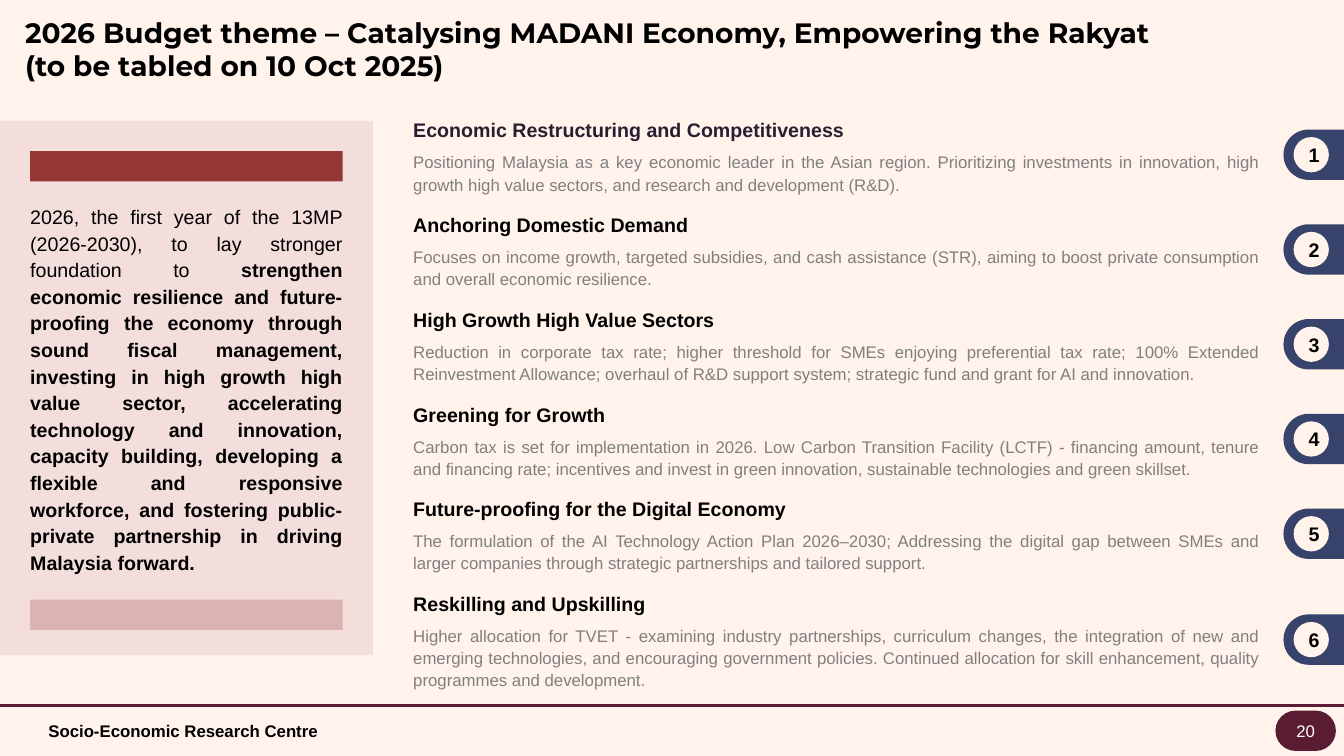
"""Build the 2026 Budget theme slide on a grid of tenth-of-an-inch cells."""
from dataclasses import dataclass

from lxml import etree
from pptx import Presentation
from pptx.dml.color import RGBColor
from pptx.enum import shapes, text
from pptx.oxml import ns
from pptx import util as u

COLUMNS, ROWS = 133.3, 75
BACKGROUND, BLACK, WHITE = "FFF3EB", "000000", "FFFFFF"
GREY, NAVY, MAROON = "808080", "37436B", "591C32"
FIRST_ROW, THEME_PITCH, TAB_WIDTH, TAB_HEIGHT, BADGE = 11, 9.4, 6, 5, 3.5
BADGE_CENTRE = 130.05


@dataclass
class Area:
    """A rectangle in grid columns and rows."""
    column: float
    row: float
    columns: float
    rows: float

    def emu(self) -> tuple:
        """Return left, top, width and height as lengths."""
        return tuple(cells(n) for n in (self.column, self.row, self.columns, self.rows))


@dataclass
class Theme:
    """A budget focus area."""
    heading: str
    detail: str
    color: str = BLACK
    rows: float = 8.7


THEMES = [
    Theme("Economic Restructuring and Competitiveness",
          "Positioning Malaysia as a key economic leader in the Asian region. Prioritizing investments in "
          "innovation, high growth high value sectors, and research and development (R&D).", "281E30"),
    Theme("Anchoring Domestic Demand",
          "Focuses on income growth, targeted subsidies, and cash assistance (STR), aiming to boost private "
          "consumption and overall economic resilience."),
    Theme("High Growth High Value Sectors",
          "Reduction in corporate tax rate; higher threshold for SMEs enjoying preferential tax rate; 100% "
          "Extended Reinvestment Allowance; overhaul of R&D support system; strategic fund and grant for AI "
          "and innovation."),
    Theme("Greening for Growth",
          "Carbon tax is set for implementation in 2026. Low Carbon Transition Facility (LCTF) - financing "
          "amount, tenure and financing rate; incentives and invest in green innovation, sustainable "
          "technologies and green skillset."),
    Theme("Future-proofing for the Digital Economy",
          "The formulation of the AI Technology Action Plan 2026–2030; Addressing the digital gap between "
          "SMEs and larger companies through strategic partnerships and tailored support."),
    Theme("Reskilling and Upskilling",
          "Higher allocation for TVET - examining industry partnerships, curriculum changes, the integration "
          "of new and emerging technologies, and encouraging government policies. Continued allocation for "
          "skill enhancement, quality programmes and development.", rows=10.9),
]
TITLE = ("2026 Budget theme – Catalysing MADANI Economy, Empowering the Rakyat",
         "(to be tabled on 10 Oct 2025)")
OUTLOOK = "2026, the first year of the 13MP (2026-2030), to lay stronger foundation to "
OUTLOOK_BOLD = (
    "strengthen economic resilience and future-proofing the economy through sound fiscal management, "
    "investing in high growth high value sector, accelerating technology and innovation, capacity building, "
    "developing a flexible and responsive workforce, and fostering public-private partnership in driving "
    "Malaysia forward.")


def cells(count: float) -> int:
    """Convert grid cells to a length."""
    return u.Inches(count / 10)


def rgb(value: str) -> RGBColor:
    """Turn a hex string into a colour."""
    return RGBColor.from_string(value)


def style(paragraph, size: float, color: str = BLACK, bold: bool | None = None, name: str = "Arial",
          align=text.PP_ALIGN.JUSTIFY, spacing: float | None = None) -> None:
    """Format a whole paragraph."""
    paragraph.alignment = align
    if spacing:
        paragraph.line_spacing = spacing
        paragraph.space_after = u.Pt(6)
    font = paragraph.font
    font.name, font.size, font.bold = name, u.Pt(size), bold
    font.color.rgb = rgb(color)


def set_frame(shape, left: float = 1, top: float = 0.5, right: float = 1, bottom: float = 0.5,
              anchor=text.MSO_ANCHOR.MIDDLE):
    """Wrap, anchor and inset a text frame, then return it."""
    frame = shape.text_frame
    frame.word_wrap = True
    frame.vertical_anchor = anchor
    frame.margin_left, frame.margin_top = cells(left), cells(top)
    frame.margin_right, frame.margin_bottom = cells(right), cells(bottom)
    return frame


def add_block(slide, kind, area: Area, color: str):
    """Add a flat filled shape without outline."""
    shape = slide.shapes.add_shape(kind, *area.emu())
    shape.shadow.inherit = False
    shape.fill.solid()
    shape.fill.fore_color.rgb = rgb(color)
    shape.line.fill.background()
    return shape


def add_label(shape, label: str, size: float, color: str, bold: bool, inset: float = 1) -> None:
    """Centre a short label in a shape."""
    frame = set_frame(shape, left=inset, right=inset)
    frame.text = label
    style(frame.paragraphs[0], size, color, bold, align=text.PP_ALIGN.CENTER)


def add_title(slide) -> None:
    """Place the two-line title."""
    title = slide.shapes.title
    title.left, title.top, title.width, title.height = Area(2, 0, 128, 5).emu()
    frame = set_frame(title, 0.5, 1.5, 0.5, 0.5, text.MSO_ANCHOR.TOP)
    frame.auto_size = text.MSO_AUTO_SIZE.NONE
    frame.text = "\n".join(TITLE)
    for paragraph in frame.paragraphs:
        style(paragraph, 20, bold=True, name="Montserrat")


def add_footer(slide) -> None:
    """Draw the rule, the centre's name and the page number."""
    rule = slide.shapes.add_connector(shapes.MSO_CONNECTOR.STRAIGHT, 0, cells(70), cells(COLUMNS), cells(70))
    rule.line.color.rgb = rgb(MAROON)
    rule.line.width = u.Pt(2.25)
    etree.SubElement(rule._element.spPr, ns.qn("a:effectLst"))
    frame = set_frame(slide.shapes.add_textbox(*Area(4, 71.1, 30, 2.8).emu()), 0.8, 0.4, 0.8, 0.4)
    frame.text = "Socio-Economic Research Centre"
    style(frame.paragraphs[0], 12, bold=True, align=text.PP_ALIGN.LEFT)
    pill = add_block(slide, shapes.MSO_SHAPE.ROUNDED_RECTANGLE, Area(126.5, 70.5, 6, 4), MAROON)
    pill.adjustments[0] = 0.5
    add_label(pill, "20", 12, WHITE, False, inset=0)


def add_outlook(slide) -> None:
    """Draw the side panel with its two bars."""
    rectangle = shapes.MSO_SHAPE.RECTANGLE
    panel = add_block(slide, rectangle, Area(0, 12, 37, 53), "F4DEDC")
    paragraph = set_frame(panel, 3, 2, 3, 2).paragraphs[0]
    style(paragraph, 14, spacing=1.13)
    paragraph.add_run().text = OUTLOOK
    emphasis = paragraph.add_run()
    emphasis.text = OUTLOOK_BOLD
    emphasis.font.bold = True
    for row, color in ((15, "953735"), (59.5, "DBB3B1")):
        add_block(slide, rectangle, Area(3, row, 31, 3), color)


def add_theme(slide, index: int, theme: Theme) -> None:
    """Draw one theme with its numbered tab at the slide's edge."""
    row = FIRST_ROW + index * THEME_PITCH
    middle = row + theme.rows / 2
    box = slide.shapes.add_textbox(*Area(40, row, 86, theme.rows).emu())
    frame = set_frame(box, anchor=text.MSO_ANCHOR.TOP)
    frame.auto_size = text.MSO_AUTO_SIZE.SHAPE_TO_FIT_TEXT
    frame.text = f"{theme.heading}\n{theme.detail}"
    heading, detail = frame.paragraphs
    style(heading, 14, theme.color, True, spacing=1.1)
    style(detail, 12, GREY, spacing=1.1)
    centre = COLUMNS - TAB_WIDTH / 2
    tab = add_block(slide, shapes.MSO_SHAPE.ROUND_2_SAME_RECTANGLE,
                    Area(centre - TAB_HEIGHT / 2, middle - TAB_WIDTH / 2, TAB_HEIGHT, TAB_WIDTH), NAVY)
    tab.adjustments[0], tab.adjustments[1] = 0.5, 0
    tab.rotation = 270
    badge = add_block(slide, shapes.MSO_SHAPE.OVAL,
                      Area(BADGE_CENTRE - BADGE / 2, middle - BADGE / 2, BADGE, BADGE), BACKGROUND)
    add_label(badge, str(index + 1), 14, BLACK, True)


def main() -> None:
    """Build and save the presentation."""
    presentation = Presentation()
    presentation.slide_width, presentation.slide_height = cells(COLUMNS), cells(ROWS)
    slide = presentation.slides.add_slide(presentation.slide_layouts[5])
    slide.background.fill.solid()
    slide.background.fill.fore_color.rgb = rgb(BACKGROUND)
    add_footer(slide)
    add_title(slide)
    add_outlook(slide)
    for index, theme in enumerate(THEMES):
        add_theme(slide, index, theme)
    presentation.save("out.pptx")


if __name__ == "__main__":
    main()
